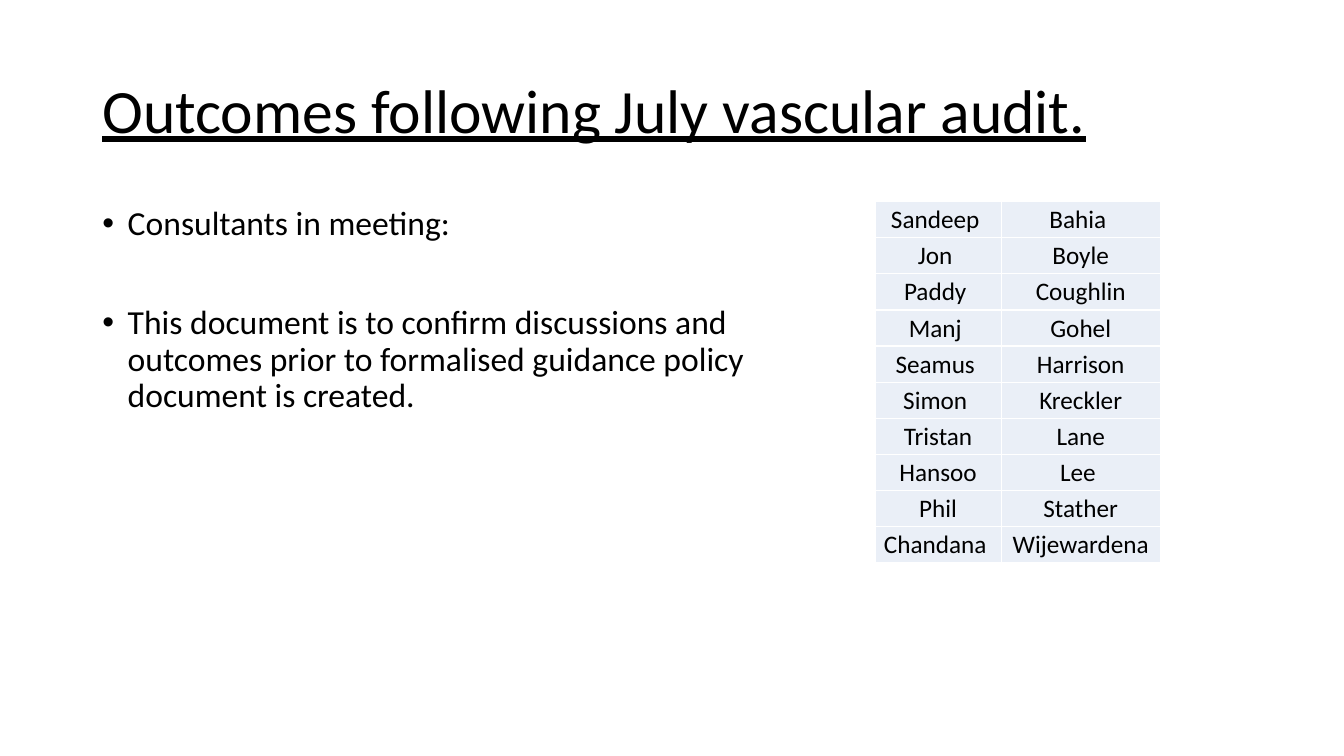
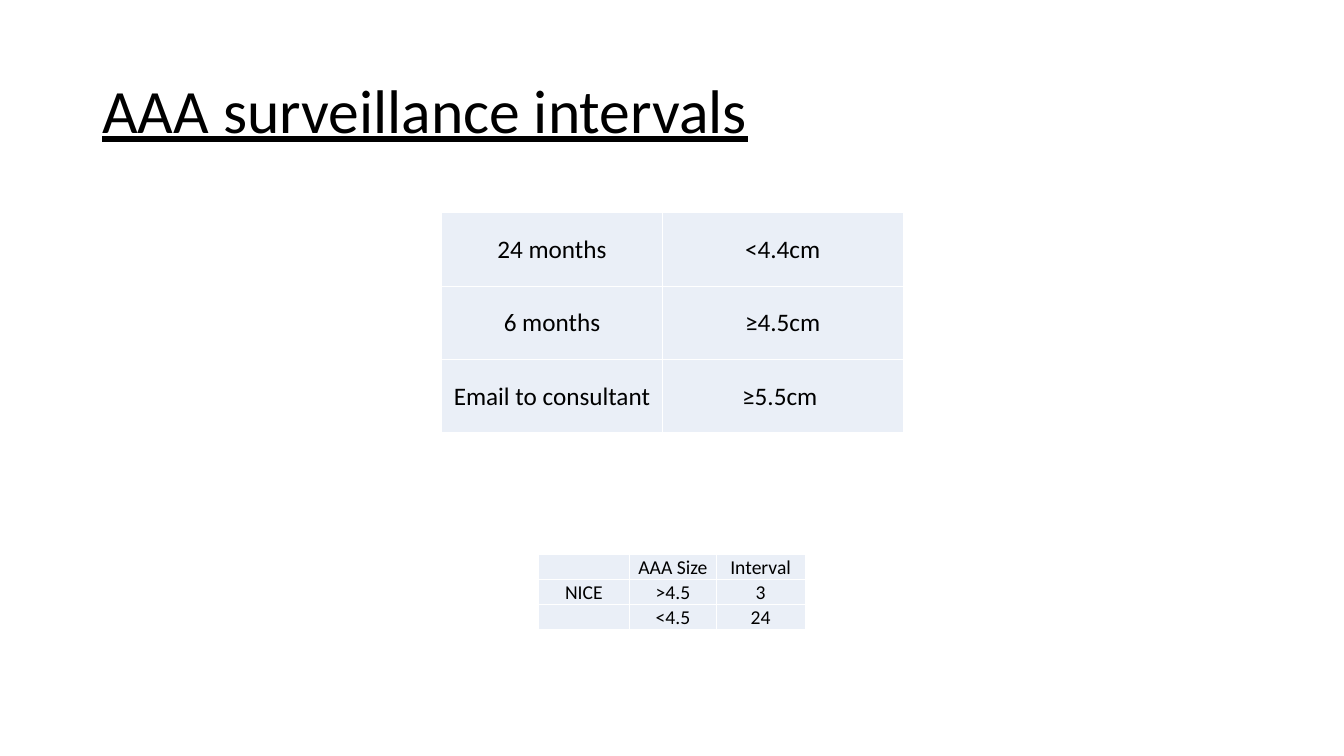
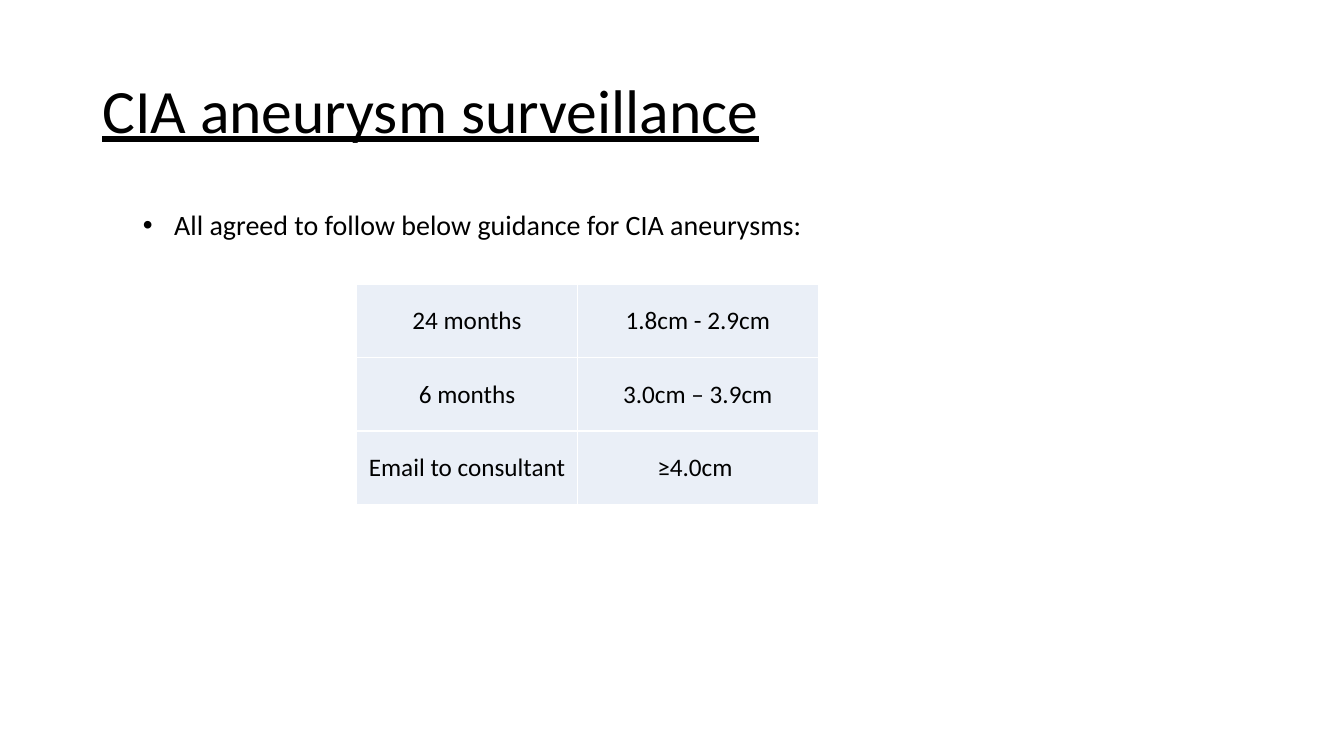
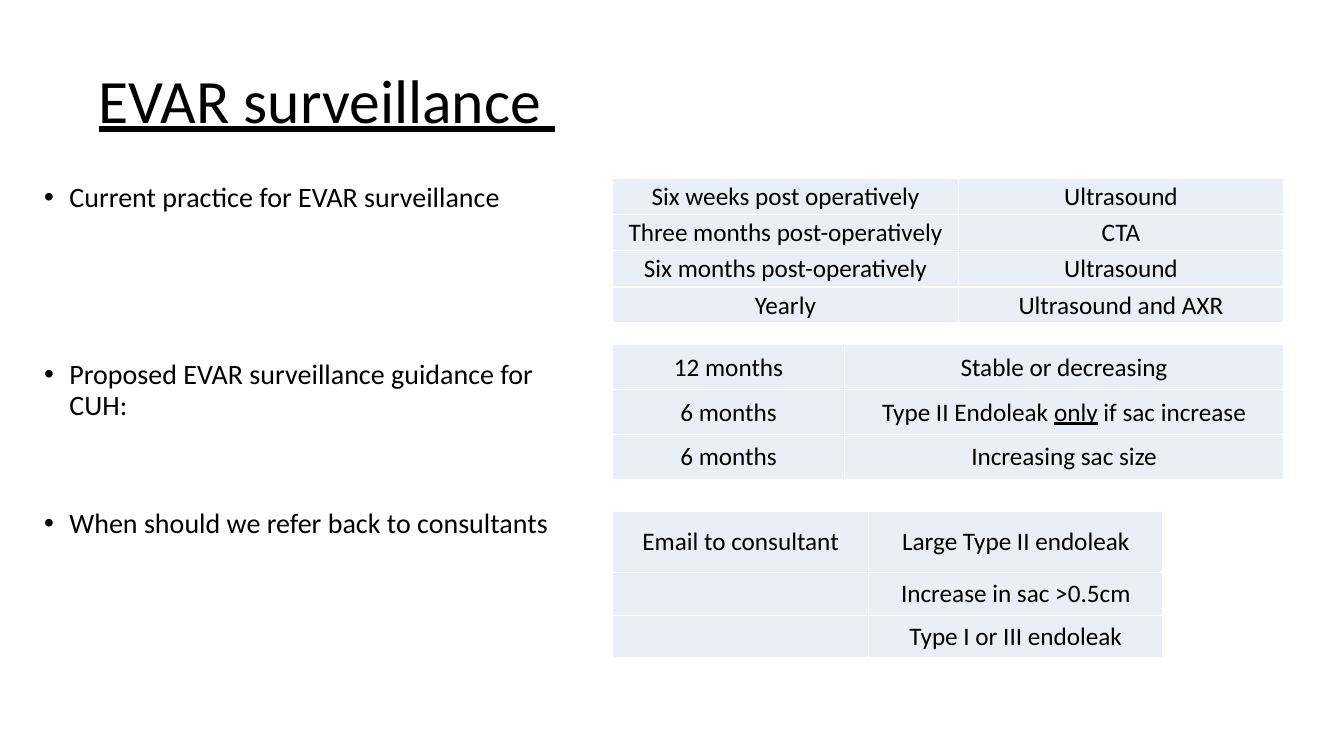
from pptx import Presentation
from pptx.dml.color import RGBColor
from pptx.enum.text import MSO_ANCHOR, PP_ALIGN
from pptx.oxml import parse_xml
from pptx.oxml.ns import nsdecls
from pptx.util import Cm, Pt

BLACK = RGBColor(0x00, 0x00, 0x00)
WHITE = RGBColor(0xFF, 0xFF, 0xFF)
PALE_BLUE = RGBColor(0xEA, 0xEF, 0xF7)
FONT = "Calibri"


def write(p, text, size=18, underline=False, align=PP_ALIGN.LEFT, spacing=1.0, before=0, hang=None):
    p.alignment = align
    p.line_spacing = spacing
    p.space_before = Pt(before)
    for i, part in enumerate(text.split("_")):
        if part:
            r = p.add_run()
            r.text = part
            r.font.name = FONT
            r.font.size = Pt(size)
            r.font.color.rgb = BLACK
            r.font.underline = underline or i % 2 == 1
    if not text:
        p._p.get_or_add_endParaRPr().set("sz", str(size * 100))
    if hang:
        pPr = p._p.get_or_add_pPr()
        pPr.set("marL", str(Cm(hang)))
        pPr.set("indent", str(-Cm(hang)))
        pPr.append(parse_xml(f'<a:buFont {nsdecls("a")} typeface="Arial"/>'))
        pPr.append(parse_xml(f'<a:buChar {nsdecls("a")} char="•"/>'))


def add_grid(s, left, top, widths, heights, rows, size=18):
    shape = s.shapes.add_table(len(rows), len(widths), Cm(left), Cm(top), Cm(sum(widths)), Cm(sum(heights)))
    table = shape.table
    table.first_row = False
    table.horz_banding = False
    for column, width in zip(table.columns, widths):
        column.width = Cm(width)
    for row, height, texts in zip(table.rows, heights, rows):
        row.height = Cm(height)
        for cell, text in zip(row.cells, texts):
            cell.fill.solid()
            cell.fill.fore_color.rgb = PALE_BLUE
            cell.vertical_anchor = MSO_ANCHOR.MIDDLE
            cell.margin_left = cell.margin_right = cell.margin_top = Cm(0.02)
            cell.margin_bottom = 0
            write(cell.text_frame.paragraphs[0], text, size=size, align=PP_ALIGN.CENTER)
            for i, side in enumerate(("lnL", "lnR", "lnT", "lnB")):
                cell._tc.get_or_add_tcPr().insert(i, parse_xml(
                    f'<a:{side} {nsdecls("a")} w="{Pt(1)}"><a:solidFill>'
                    f'<a:srgbClr val="{WHITE}"/></a:solidFill></a:{side}>'))


prs = Presentation()
prs.slide_width = Cm(33.87)
prs.slide_height = Cm(19.05)

slides = []
for title, left, top in (
    ("Outcomes following July vascular audit.", 2.33, 1.01),
    ("AAA surveillance intervals", 2.33, 1.01),
    ("CIA aneurysm surveillance", 2.33, 1.01),
    ("EVAR surveillance ", 2.24, 0.76),
):
    s = prs.slides.add_slide(prs.slide_layouts[6])
    tf = s.shapes.add_textbox(Cm(left), Cm(top), Cm(29.21), Cm(3.68)).text_frame
    tf.word_wrap = True
    tf.vertical_anchor = MSO_ANCHOR.MIDDLE
    write(tf.paragraphs[0], title, size=44, underline=True, spacing=0.9)
    slides.append(s)
audit, aaa, cia, evar = slides

for s, box, wrap, size, spacing, hang, bullets in (
    (audit, (2.33, 5.08, 17.22, 12.88), True, 24, 0.9, 0.64, (
        ("Consultants in meeting:", 0),
        ("This document is to confirm discussions and outcomes prior to formalised "
         "guidance policy document is created.", 45),
    )),
    (cia, (3.35, 5.11, 17.27, 1.12), False, 20, 1.0, 0.79, (
        ("All agreed to follow below guidance for CIA aneurysms:", 0),
    )),
    (evar, (0.86, 4.5, 13.46, 12.34), True, 20, 0.9, 0.64, (
        ("Current practice for EVAR surveillance", 0),
        ("Proposed EVAR surveillance guidance for CUH:", 105),
        ("When should we refer back to consultants", 63),
    )),
):
    tf = s.shapes.add_textbox(*[Cm(n) for n in box]).text_frame
    tf.word_wrap = wrap
    for i, (text, before) in enumerate(bullets):
        p = tf.add_paragraph() if i else tf.paragraphs[0]
        write(p, text, size=size, spacing=spacing, before=before, hang=hang)

consultants = (
    ("Sandeep ", "Bahia "),
    ("Jon ", "Boyle"),
    ("Paddy ", "Coughlin"),
    ("Manj ", "Gohel"),
    ("Seamus ", "Harrison"),
    ("Simon ", "Kreckler"),
    ("Tristan", "Lane"),
    ("Hansoo", "Lee "),
    ("Phil", "Stather"),
    ("Chandana ", "Wijewardena"),
)
add_grid(audit, 22.05, 5.08, (3.18, 4.01), [0.91] * 10, consultants)

add_grid(aaa, 13.56, 13.97, (2.31, 2.18, 2.24), [0.63] * 3, (
    ("", "AAA Size", "Interval"),
    ("NICE", ">4.5", "3"),
    ("", "<4.5", "24"),
), size=14)

intervals = ("24 months", "6 months", "Email to consultant")
for s, left, top, sizes in (
    (aaa, 11.13, 5.36, ("<4.4cm", "≥4.5cm", "≥5.5cm ")),
    (cia, 8.99, 7.16, ("1.8cm - 2.9cm", "3.0cm – 3.9cm", "≥4.0cm ")),
):
    add_grid(s, left, top, (5.56, 6.07), [1.85] * 3, list(zip(intervals, sizes)))

for top, widths, heights, rows in (
    (4.5, (8.71, 8.2), [0.91] * 4, (
        ("Six weeks post operatively", "Ultrasound"),
        ("Three months post-operatively", "CTA"),
        ("Six months post-operatively", "Ultrasound"),
        ("Yearly", "Ultrasound and AXR"),
    )),
    (8.69, (5.84, 11.07), [1.13] * 3, (
        ("12 months", "Stable or decreasing"),
        ("6 months", "Type II Endoleak _only_ if sac increase"),
        ("6 months", "Increasing sac size"),
    )),
    (12.88, (6.45, 7.42), (1.55, 1.07, 1.07), (
        ("Email to consultant", "Large Type II endoleak"),
        ("", "Increase in sac >0.5cm"),
        ("", "Type I or III endoleak"),
    )),
):
    add_grid(evar, 15.44, top, widths, heights, rows)

prs.save("out.pptx")
